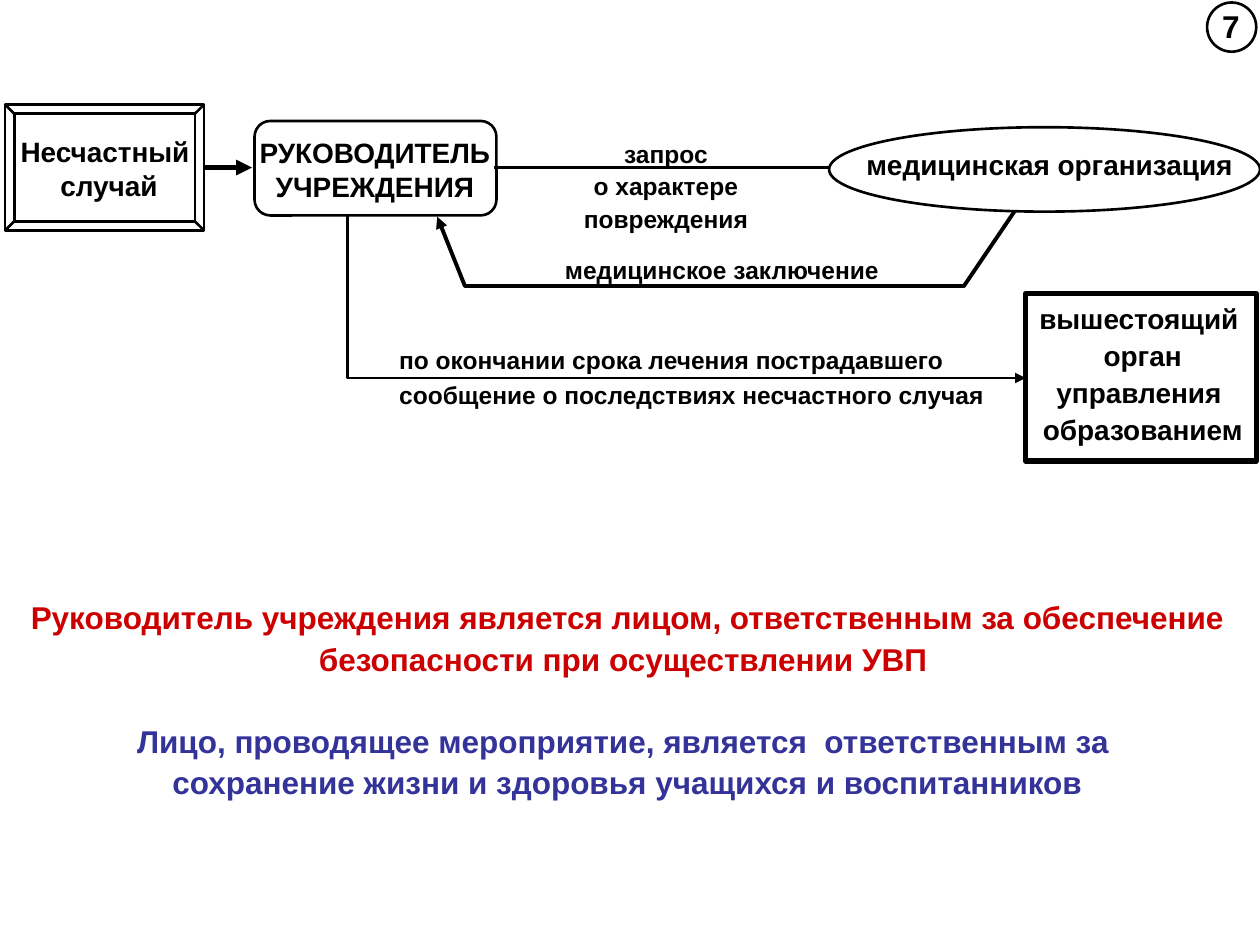
"""Builds the accident report flow slide."""
from dataclasses import dataclass

from pptx import Presentation
from pptx.dml.color import RGBColor
from pptx.enum.shapes import MSO_CONNECTOR, MSO_SHAPE
from pptx.enum.text import MSO_AUTO_SIZE, PP_ALIGN
from pptx.oxml.ns import qn
from pptx.util import Inches, Pt
from lxml import etree

OVAL, RECT = MSO_SHAPE.OVAL, MSO_SHAPE.RECTANGLE
ROUND, BEVEL = MSO_SHAPE.ROUNDED_RECTANGLE, MSO_SHAPE.BEVEL
STRAIGHT = MSO_CONNECTOR.STRAIGHT
LEFT, MID = PP_ALIGN.LEFT, PP_ALIGN.CENTER
GROW = MSO_AUTO_SIZE.SHAPE_TO_FIT_TEXT
COLS, ROWS = 100, 75
CELL = Inches(0.1)


@dataclass(frozen=True)
class Theme:
    """Colours, font and type sizes of the slide."""
    ink: str = "000000"
    red: str = "CC0000"
    blue: str = "333399"
    font: str = "Arial"
    large: int = 18
    node: int = 16
    label: int = 14
    thin: float = 1.5
    firm: float = 2.25
    thick: float = 3


THEME = Theme()


def apply(target, values):
    """Set each named value on the target."""
    for name, value in values.items():
        setattr(target, name, value)


def place(box, part):
    """Turn a part in grid cells within a box into slide lengths."""
    left, top, *size = part
    cells = (box[0] + left, box[1] + top, *size)
    return [round(cell * CELL) for cell in cells]


def stroke(shape, width, ends=()):
    """Draw the outline of a shape, with arrowheads at the named ends."""
    shape.line.color.rgb = RGBColor.from_string(THEME.ink)
    shape.line.width = Pt(width)
    props = shape.element.spPr
    for end in ends:
        etree.SubElement(props.find(qn("a:ln")), qn(f"a:{end}"), type="triangle")


def node(slide, box, kind, part, width=THEME.thin, bend=None):
    """Add an outlined shape."""
    shape = slide.shapes.add_shape(kind, *place(box, part))
    shape.shadow.inherit = False
    shape.fill.background()
    if bend is not None:
        shape.adjustments[0] = bend
    stroke(shape, width)


def text(slide, box, part, lines, size, align=MID, pitch=1.0, wrap=False):
    """Add bold lines, each given as words, colour and space before."""
    frame = slide.shapes.add_textbox(*place(box, part)).text_frame
    apply(frame, {"word_wrap": wrap, "auto_size": GROW})
    for order, (words, tone, gap) in enumerate(lines):
        para = frame.add_paragraph() if order else frame.paragraphs[0]
        para.text = words
        apply(para, {"alignment": align, "line_spacing": pitch})
        if gap:
            para.space_before = Pt(gap)
        for run in para.runs:
            apply(run.font, {"name": THEME.font, "size": Pt(size), "bold": True})
            run.font.color.rgb = RGBColor.from_string(tone)


def plain(*lines):
    """Give lines the ink colour and no space before."""
    return [(words, THEME.ink, 0) for words in lines]


def link(slide, box, start, end, width, ends=()):
    """Add a straight connector."""
    line = slide.shapes.add_connector(
        STRAIGHT, *place(box, start), *place(box, end))
    stroke(line, width, ends)
    etree.SubElement(line.element.spPr, qn("a:effectLst"))


def route(slide, box, points, width, ends):
    """Add an open bent line through the points."""
    first, *rest = [place(box, point) for point in points]
    path = slide.shapes.build_freeform(*first)
    path.add_line_segments(rest, close=False)
    shape = path.convert_to_shape()
    shape.shadow.inherit = False
    shape.fill.background()
    stroke(shape, width, ends)


def badge(slide, box):
    """Place the page number in its circle."""
    node(slide, box, OVAL, (0, 0.1, 3.9, 3.9))
    text(slide, box, (0.2, 0, 3.4, 4), plain("7"), THEME.large)


def actors(slide, box):
    """Place the four parties with their names."""
    node(slide, box, OVAL, (65.8, 2.1, 34.2, 6.7))
    node(slide, box, ROUND, (20.2, 1.6, 19.2, 7.5), bend=0.167)
    node(slide, box, BEVEL, (0.4, 0.3, 15.8, 10), bend=0.073)
    node(slide, box, RECT, (81.4, 15.3, 18.3, 13.3), THEME.thick)
    names = [
        ((67.4, 3.2, 31.8, 3.7), 1.0, ("медицинская организация",)),
        ((19.5, 2.3, 20.5, 6.4), 1.0, ("РУКОВОДИТЕЛЬ", "УЧРЕЖДЕНИЯ")),
        ((0.6, 2.2, 16.1, 6.4), 1.0, ("Несчастный ", "случай")),
        ((81.4, 15.2, 18.6, 12.7), 1.1,
         ("вышестоящий ", "орган", "управления ", "образованием")),
    ]
    for part, pitch, lines in names:
        text(slide, box, part, plain(*lines), THEME.node, pitch=pitch)


def links(slide, box):
    """Place the lines between the parties with their labels."""
    axis, base = 5.3, 22
    link(slide, box, (39.2, axis), (65.8, axis), THEME.thin)
    link(slide, box, (16.2, axis), (20, axis), THEME.thick, ["tailEnd"])
    route(slide, box, [(34.7, 9.2), (36.9, 14.7), (76.5, 14.7), (80.5, 8.8)],
          THEME.firm, ["headEnd"])
    route(slide, box, [(27.6, 9), (27.6, base), (81.4, base)],
          THEME.thin, ["tailEnd"])
    text(slide, box, (39.4, 2.3, 26.9, 6.1),
         plain("запрос", "о характере\vповреждения"), THEME.label, pitch=1.1)
    text(slide, box, (43.8, 11.5, 27, 3.6),
         plain("медицинское заключение"), THEME.label, pitch=1.1)
    text(slide, box, (30.7, 18.4, 48.4, 6.6),
         plain("по окончании срока лечения пострадавшего",
               "сообщение о последствиях несчастного случая"),
         THEME.label, LEFT, 1.2)


def duties(slide, box):
    """Place the two statements of duty."""
    lines = [
        ("Руководитель учреждения является лицом, ответственным за обеспечение",
         THEME.red, 0),
        ("безопасности при осуществлении УВП ", THEME.red, 0),
        ("Лицо, проводящее мероприятие, является  ответственным за ",
         THEME.blue, 23),
        ("сохранение жизни и здоровья учащихся и воспитанников",
         THEME.blue, 0),
    ]
    text(slide, box, (0, 0, *box[2:]), lines, THEME.large, pitch=1.1)


def main():
    """Build and save the slide."""
    deck = Presentation()
    apply(deck, {"slide_width": COLS * CELL, "slide_height": ROWS * CELL})
    slide = deck.slides.add_slide(deck.slide_layouts[6])
    flow = (0, 8, COLS, 29)
    badge(slide, (95.8, 0.1, 3.9, 4))
    actors(slide, flow)
    links(slide, flow)
    duties(slide, (1.1, 46.7, 97.4, 17.5))
    deck.save("out.pptx")


if __name__ == "__main__":
    main()
